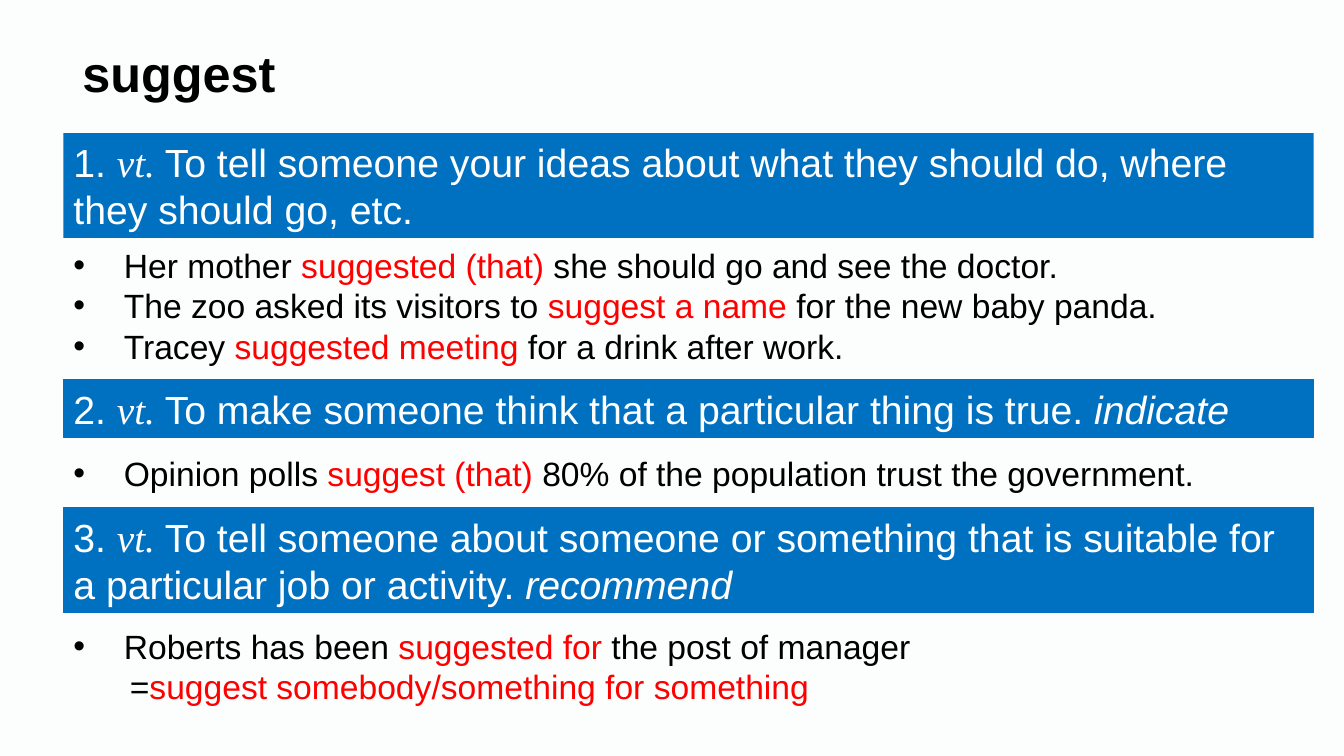
from pptx import Presentation
from pptx.dml.color import RGBColor
from pptx.enum.shapes import MSO_SHAPE
from pptx.enum.text import MSO_ANCHOR, MSO_AUTO_SIZE, PP_ALIGN
from pptx.util import Inches, Pt
from lxml import etree

RECTANGLE, ROUNDED = MSO_SHAPE.RECTANGLE, MSO_SHAPE.ROUNDED_RECTANGLE
TOP, MIDDLE = MSO_ANCHOR.TOP, MSO_ANCHOR.MIDDLE
LEFT, CENTER = PP_ALIGN.LEFT, PP_ALIGN.CENTER
GROW = MSO_AUTO_SIZE.SHAPE_TO_FIT_TEXT
DRAWING = "{http://schemas.openxmlformats.org/drawingml/2006/main}"

BLACK, WHITE, RED, BLUE = "000000", "FFFFFF", "FF0000", "0070C0"
MARGIN = 0.63
BULLET_INDENT, FORMULA_INDENT = 0.5, 0.56


def color(value):
    return RGBColor.from_string(value)


def add_span(para, text, ink, **formats):
    span = para.add_run()
    span.text = text
    for name, value in ({"name": "Arial"} | formats).items():
        setattr(span.font, name, value)
    span.font.color.rgb = color(ink)


deck = Presentation()
deck.slide_width, deck.slide_height = Inches(13.33), Inches(7.5)
page = deck.slides.add_slide(deck.slide_layouts[6])
page.background.fill.solid()
page.background.fill.fore_color.rgb = color("FCFDFD")

# Headword
title = page.shapes.add_shape(ROUNDED, Inches(0.5), Inches(0.34), Inches(2.55), Inches(0.75))
title.shadow.inherit = False
title.fill.background()
title.line.fill.background()
title.text_frame.vertical_anchor = MIDDLE
title_para = title.text_frame.paragraphs[0]
title_para.alignment = CENTER
add_span(title_para, "suggest", BLACK, size=Pt(36), bold=True)

# Definitions: top, height, outlined, meaning, synonym
definitions = [
    (1.32, 1.04, False,
     "To tell someone your ideas about what they should do, where they should go, etc.", ""),
    (3.77, 0.57, True, "To make someone think that a particular thing is true. ", "indicate"),
    (5.04, 1.04, True,
     "To tell someone about someone or something that is suitable for "
     "a particular job or activity. ", "recommend"),
]
for number, (top, height, outlined, meaning, synonym) in enumerate(definitions, 1):
    banner = page.shapes.add_shape(
        RECTANGLE, Inches(MARGIN), Inches(top), Inches(12.4), Inches(height))
    banner.shadow.inherit = False
    banner.fill.solid()
    banner.fill.fore_color.rgb = color(BLUE)
    if outlined:
        banner.line.color.rgb = color(BLUE)
        banner.line.width = Pt(0.75)
    else:
        banner.line.fill.background()
    frame = banner.text_frame
    frame.word_wrap = True
    frame.auto_size = GROW
    frame.vertical_anchor = TOP
    para = frame.paragraphs[0]
    para.alignment = LEFT
    add_span(para, f"{number}. ", WHITE, size=Pt(28))
    add_span(para, "vt. ", WHITE, size=Pt(28), name="Times New Roman", italic=True)
    add_span(para, meaning, WHITE, size=Pt(28))
    if synonym:
        add_span(para, synonym, WHITE, size=Pt(28), italic=True)

# Examples: top, height, sentences as (before, key phrase, after)
examples = [
    (2.38, 1.31, [
        ("Her mother ", "suggested (that) ", "she should go and see the doctor."),
        ("The zoo asked its visitors to ", "suggest a name ", "for the new baby panda."),
        ("Tracey ", "suggested meeting ", "for a drink after work."),
    ]),
    (4.44, 0.5, [
        ("Opinion polls ", "suggest (that) ", "80% of the population trust the government."),
    ]),
    (6.16, 0.91, [
        ("Roberts has been ", "suggested for ", "the post of manager"),
        ("=", "suggest somebody/something for something", ""),
    ]),
]
for top, height, sentences in examples:
    box = page.shapes.add_textbox(Inches(MARGIN), Inches(top), Inches(12.7), Inches(height))
    frame = box.text_frame
    frame.word_wrap = True
    frame.auto_size = GROW
    for index, (before, phrase, after) in enumerate(sentences):
        para = frame.add_paragraph() if index else frame.paragraphs[0]
        properties = para._p.get_or_add_pPr()
        if before == "=":
            properties.set("marL", str(Inches(FORMULA_INDENT)))
            properties.set("indent", "0")
        else:
            properties.set("marL", str(Inches(BULLET_INDENT)))
            properties.set("indent", str(-Inches(BULLET_INDENT)))
            etree.SubElement(properties, DRAWING + "buFont", typeface="Arial")
            etree.SubElement(properties, DRAWING + "buChar", char="•")
        for text, ink in ((before, BLACK), (phrase, RED), (after, BLACK)):
            if text:
                add_span(para, text, ink, size=Pt(24))

deck.save("out.pptx")
